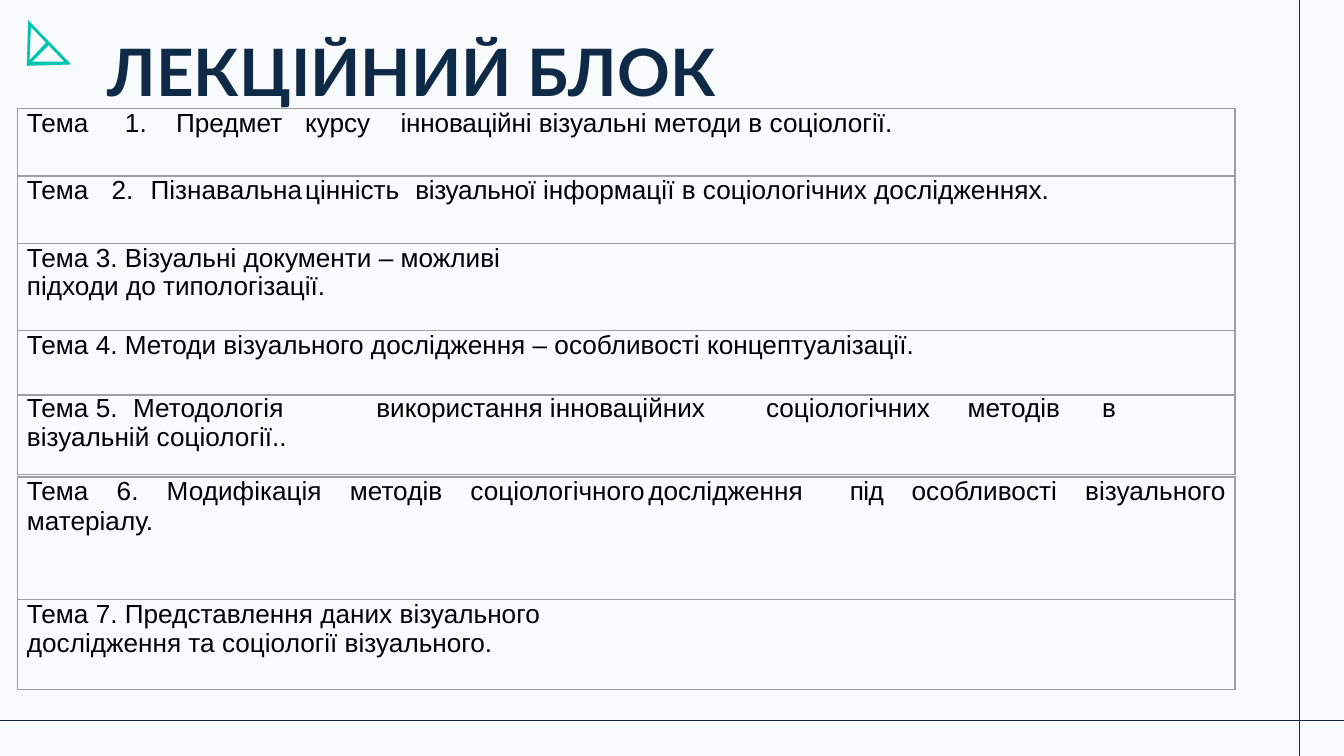
from dataclasses import dataclass
from typing import Any

from lxml import etree
from pptx import Presentation, util as u
from pptx.dml.color import RGBColor
from pptx.enum import shapes, text
from pptx.oxml import ns

NAVY, TEAL, GRAY, BLACK, PAPER = "0E2A47", "00C3B1", "9E9E9E", "000000", "F8FAFB"

FIRST_TOPICS = [
    (0.5, [dict(tabs=[0.73, 1.11, 2.07, 2.78], spans=[
        ("Тема\t1.\tПредмет\tкурсу\t", 0), ("інноваційні ", -10),
        ("візуальні методи в соціології.", 0)])]),
    (0.5, [dict(before=7.8, tabs=[0.63, 0.92, 2.07, 2.89], spans=[
        ("Тема\t2.\tПізнавальна\tцінність\t", 0), ("візуальної ", -20),
        ("інформації в соціологічних дослідженнях.", 0)])]),
    (0.65, [dict(spacing=15.8, spans=[("Тема 3. Візуальні документи – можливі", 0)]),
            dict(spacing=15.4, spans=[("підходи до типологізації.", 0)])]),
    (0.48, [dict(before=7.8, spans=[
        ("Тема 4. Методи візуального дослідження – особливості концептуалізації.", 0)])]),
    (0.59, [dict(spacing=15.2, tabs=[0.79, 1.24, 2.6], spans=[
        ("Тема 5.\tМетодологія\tвикористання інноваційних\tсоціологічних\tметодів\t"
         "в візуальній соціології..", 0)])]),
]
LAST_TOPICS = [
    (0.91, [dict(align=text.PP_ALIGN.JUSTIFY, tabs=[1.87, 3.48], spans=[
        ("Тема 6. Модифікація методів соціологічного\tдослідження\t", 0), ("під ", -30),
        ("особливості візуального матеріалу.", 0)])]),
    (0.67, [dict(spacing=15.8, spans=[("Тема 7. Представлення даних візуального", 0)]),
            dict(spacing=15.4, before=0.1,
                 spans=[("дослідження та соціології візуального.", 0)])]),
]


def color(value):
    """Turn a hex string into a colour."""
    return RGBColor.from_string(value)


def add_xml(parent, tag, **attributes):
    """Append a DrawingML element to its parent."""
    return etree.SubElement(parent, ns.qn(tag), attributes)


@dataclass
class SlideWriter:
    """Hold the style and the current page."""
    page: Any
    title_font: str = "Lato"
    body_font: str = "Arial"
    body_size: float = 14
    line_width: float = 0.75
    indent: float = 0.07

    def style(self, para, name, size, ink, bold=False):
        """Set the font of a paragraph."""
        font = para.font
        font.name, font.size, font.bold = name, u.Pt(size), bold
        font.color.rgb = color(ink)

    def title(self, words, left, top, width, height):
        """Fill and place the title placeholder."""
        box = self.page.shapes.title
        box.left, box.top, box.width, box.height = map(u.Inches, (left, top, width, height))
        frame = box.text_frame
        frame.text = words
        frame.vertical_anchor = text.MSO_ANCHOR.TOP
        frame.auto_size = text.MSO_AUTO_SIZE.NONE
        frame.margin_left = frame.margin_right = u.Inches(0.1)
        frame.margin_top = frame.margin_bottom = u.Inches(0.1)
        para = frame.paragraphs[0]
        para.alignment = text.PP_ALIGN.LEFT
        para.line_spacing = 1.0
        para.space_before = u.Pt(0)
        self.style(para, self.title_font, 35, NAVY, True)

    def line(self, *ends):
        """Draw a thin rule between two points."""
        rule = self.page.shapes.add_connector(
            shapes.MSO_CONNECTOR.STRAIGHT, *map(u.Inches, ends))
        rule.line.color.rgb = color(NAVY)
        rule.line.width = u.Pt(self.line_width)
        add_xml(rule._element.spPr, "a:effectLst")

    def outline(self, *contours):
        """Draw a filled shape from closed contours."""
        builder = None
        for contour in contours:
            start, *others = [tuple(map(u.Inches, point)) for point in contour]
            if builder is None:
                builder = self.page.shapes.build_freeform(*start)
            else:
                builder.move_to(*start)
            builder.add_line_segments(others, close=True)
        shape = builder.convert_to_shape()
        shape.shadow.inherit = False
        shape.fill.solid()
        shape.fill.fore_color.rgb = color(TEAL)
        shape.line.fill.background()

    def paragraph(self, para, spans, tabs=(), spacing=None, before=0,
                  align=text.PP_ALIGN.LEFT):
        """Write a tabbed topic paragraph."""
        para.alignment = align
        para.space_before = u.Pt(before)
        if spacing:
            para.line_spacing = u.Pt(spacing)
        properties = para._p.get_or_add_pPr()
        for side in ("marL", "marR"):
            properties.set(side, str(u.Inches(self.indent)))
        if tabs:
            stops = add_xml(properties, "a:tabLst")
            for stop in tabs:
                add_xml(stops, "a:tab", pos=str(u.Inches(stop)), algn="l")
        self.style(para, self.body_font, self.body_size, BLACK)
        for words, tracking in spans:
            span = para.add_run()
            span.text = words
            if tracking:
                span._r.get_or_add_rPr().set("spc", str(tracking))

    def cell(self, cell, paragraphs):
        """Border a cell and write its paragraphs."""
        cell.margin_left = cell.margin_right = cell.margin_top = cell.margin_bottom = 0
        properties = cell._tc.get_or_add_tcPr()
        for side in "LRTB":
            border = add_xml(properties, f"a:ln{side}", w=str(u.Pt(self.line_width)))
            add_xml(add_xml(border, "a:solidFill"), "a:srgbClr", val=GRAY)
        cell.fill.background()
        frame = cell.text_frame
        for index, content in enumerate(paragraphs):
            para = frame.add_paragraph() if index else frame.paragraphs[0]
            self.paragraph(para, **content)

    def table(self, topics, left, top, width):
        """Build a one-column table of topics."""
        height = sum(row_height for row_height, _ in topics)
        table = self.page.shapes.add_table(
            len(topics), 1, *map(u.Inches, (left, top, width, height))).table
        table.first_row = table.horz_banding = False
        for row, (row_height, paragraphs) in zip(table.rows, topics):
            row.height = u.Inches(row_height)
            self.cell(row.cells[0], paragraphs)


def main():
    """Build the lecture topics slide."""
    deck = Presentation()
    deck.slide_width = u.Inches(10)
    deck.slide_height = deck.slide_width * 9 // 16
    page = deck.slides.add_slide(deck.slide_layouts[5])
    page.background.fill.solid()
    page.background.fill.fore_color.rgb = color(PAPER)
    writer = SlideWriter(page)
    writer.line(10.06, 5.36, -0.06, 5.36)
    writer.line(9.67, 5.68, 9.67, -0.05)
    writer.title("ЛЕКЦІЙНИЙ БЛОК", 0.7, 0.13, 8.43, 0.63)
    writer.outline([(0.23, 0.2), (0.48, 0.46), (0.22, 0.46)],
                   [(0.21, 0.15), (0.2, 0.49), (0.53, 0.48)])
    writer.outline([(0.35, 0.31), (0.37, 0.33), (0.22, 0.48), (0.2, 0.47)])
    writer.table(FIRST_TOPICS, 0.13, 0.81, 9.06)
    writer.table(LAST_TOPICS, 0.13, 3.55, 9.06)
    deck.save("out.pptx")


if __name__ == "__main__":
    main()
